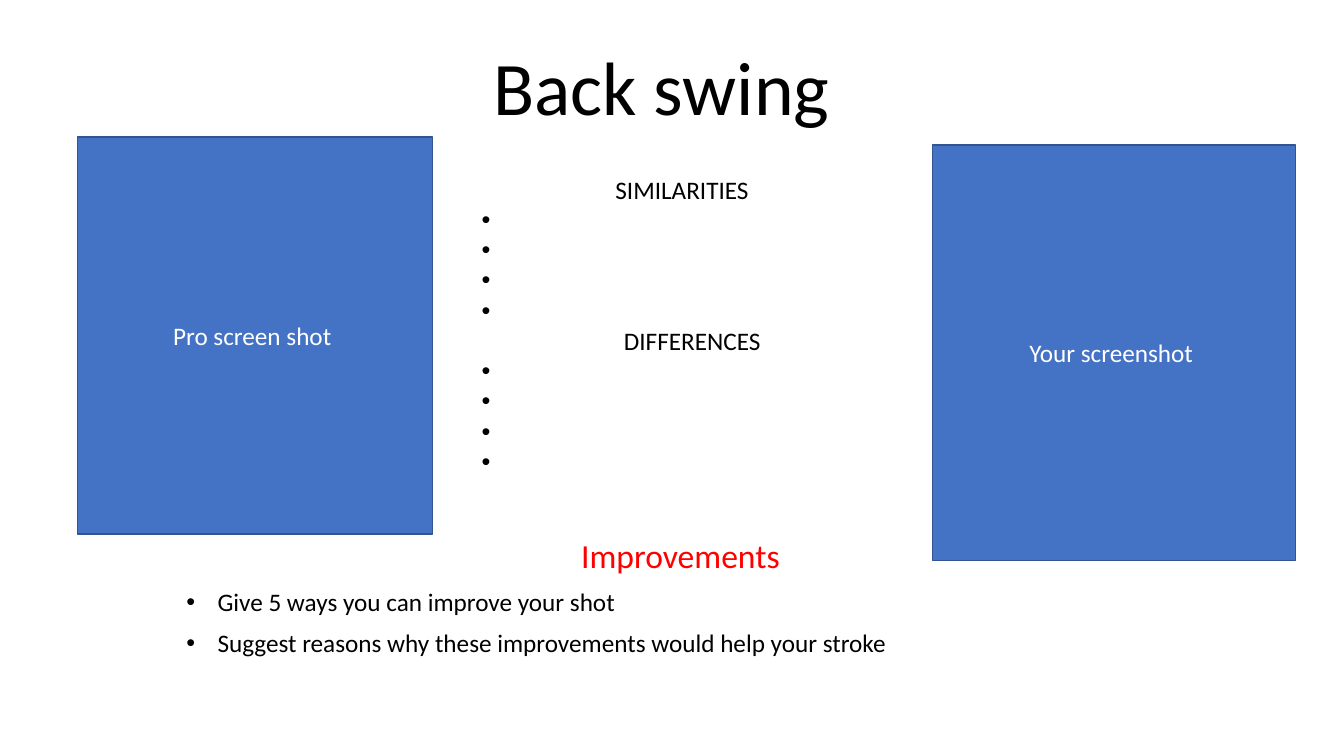
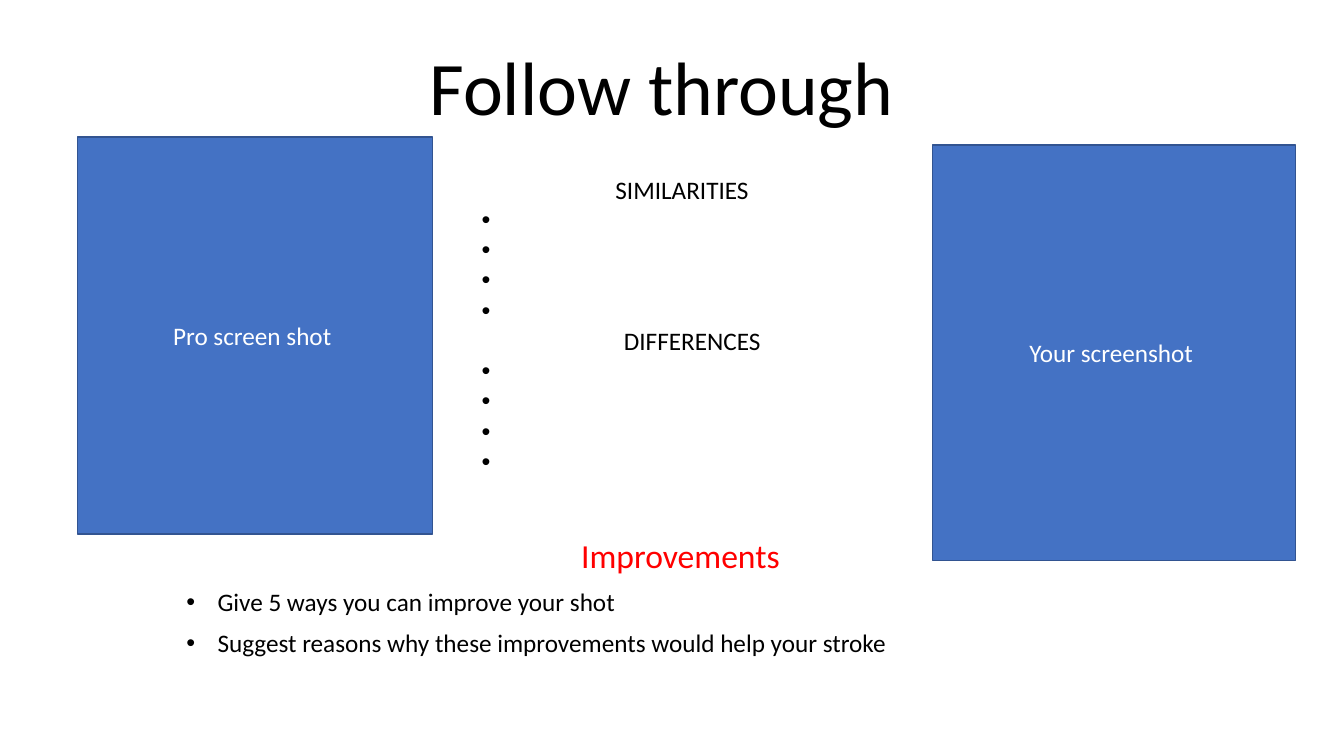
from lxml.etree import SubElement
from pptx import Presentation
from pptx.dml.color import RGBColor
from pptx.enum.shapes import MSO_SHAPE
from pptx.enum.text import MSO_ANCHOR, PP_ALIGN
from pptx.oxml.ns import qn
from pptx.util import Inches, Pt

TITLES = ["Back swing", "Follow through"]
SCREENSHOTS = [
    ("Pro screen shot ", (0.77, 1.36, 3.52, 3.94)),
    ("Your screenshot ", (9.25, 1.44, 3.6, 4.12)),
]
COMPARISONS = [
    ("SIMILARITIES", {"align": PP_ALIGN.CENTER}),
    ("DIFFERENCES", {"indent": 1.41}),
]
BULLETS_PER_COMPARISON = 4
IMPROVEMENTS = [
    "Give 5 ways you can improve your shot",
    "Suggest reasons why these improvements would help your stroke",
]

TITLE_BOX = (1.56, 0.39, 10, 0.97)
COMPARISON_BOX = (4.68, 1.68, 4.17, 3.43)
IMPROVEMENT_BOX = (1.75, 5.3, 10, 1.81)

FONT = "Calibri"
BULLET_INDENT = 0.31
BLACK = RGBColor(0x00, 0x00, 0x00)
WHITE = RGBColor(0xFF, 0xFF, 0xFF)
RED = RGBColor(0xFF, 0x00, 0x00)
BLUE = RGBColor(0x44, 0x72, 0xC4)
DARK_BLUE = RGBColor(0x32, 0x54, 0x91)


def add_text(frame, text, size=18, color=BLACK, align=PP_ALIGN.LEFT,
             line_spacing=1.0, space_before=0, indent=0, bullet=False):
    paragraph = frame.paragraphs[0]
    if paragraph.runs:
        paragraph = frame.add_paragraph()
    paragraph.alignment = align
    paragraph.line_spacing = line_spacing
    paragraph.space_before = Pt(space_before)
    properties = paragraph._p.get_or_add_pPr()
    if bullet:
        indent = BULLET_INDENT
        properties.set("indent", str(-Inches(indent)))
        SubElement(properties, qn("a:buFont"), typeface="Arial")
        SubElement(properties, qn("a:buChar"), char="•")
    properties.set("marL", str(Inches(indent)))
    run = paragraph.add_run()
    run.text = text
    run.font.name = FONT
    run.font.size = Pt(size)
    run.font.color.rgb = color


def add_text_frame(slide, box, anchor=MSO_ANCHOR.TOP):
    frame = slide.shapes.add_textbox(*map(Inches, box)).text_frame
    frame.word_wrap = True
    frame.vertical_anchor = anchor
    return frame


def add_screenshot(slide, label, box):
    shape = slide.shapes.add_shape(MSO_SHAPE.RECTANGLE, *map(Inches, box))
    shape.shadow.inherit = False
    shape.fill.solid()
    shape.fill.fore_color.rgb = BLUE
    shape.line.color.rgb = DARK_BLUE
    shape.line.width = Pt(1)
    shape.text_frame.vertical_anchor = MSO_ANCHOR.MIDDLE
    add_text(shape.text_frame, label, color=WHITE, align=PP_ALIGN.CENTER)


def add_stroke_slide(presentation, title):
    slide = presentation.slides.add_slide(presentation.slide_layouts[6])
    title_frame = add_text_frame(slide, TITLE_BOX, MSO_ANCHOR.BOTTOM)
    add_text(title_frame, title, size=54, align=PP_ALIGN.CENTER, line_spacing=0.9)

    improvements = add_text_frame(slide, IMPROVEMENT_BOX)
    spacing = {"line_spacing": 0.9, "space_before": 10}
    add_text(improvements, "Improvements", size=24, color=RED,
             align=PP_ALIGN.CENTER, **spacing)
    for improvement in IMPROVEMENTS:
        add_text(improvements, improvement, bullet=True, **spacing)

    comparison = add_text_frame(slide, COMPARISON_BOX)
    for heading, placement in COMPARISONS:
        add_text(comparison, heading, **placement)
        for _ in range(BULLETS_PER_COMPARISON):
            add_text(comparison, " ", bullet=True)

    for label, box in SCREENSHOTS:
        add_screenshot(slide, label, box)


def main():
    presentation = Presentation()
    presentation.slide_width = Inches(13.33)
    presentation.slide_height = Inches(7.5)
    for title in TITLES:
        add_stroke_slide(presentation, title)
    presentation.save("out.pptx")


if __name__ == "__main__":
    main()
